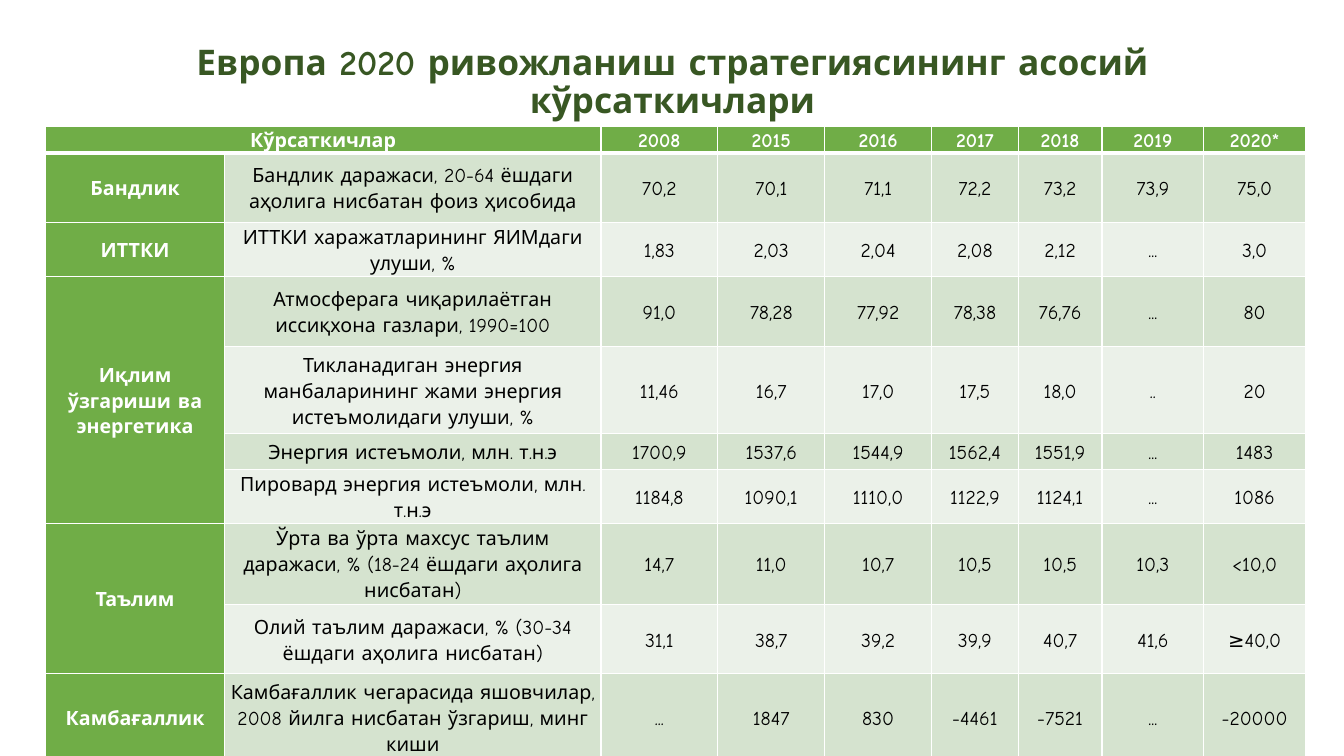
from dataclasses import dataclass

from lxml import etree
from pptx import Presentation, util as u
from pptx.dml.color import RGBColor
from pptx.enum import text
from pptx.oxml import ns

STEP = u.Inches(0.01)  # the page grid has 1333 columns and 750 rows
PAGE_COLUMNS, PAGE_ROWS = 1333, 750
TABLE_COLUMNS = [178, 373, 116, 106, 106, 86, 83, 101, 101]
HEADER_ROWS = 17

FONT = "Comic Neue"
TITLE_GREEN = RGBColor(0x38, 0x57, 0x23)
HEAD_GREEN = RGBColor(0x70, 0xAD, 0x47)
BAND_DARK = RGBColor(0xD5, 0xE3, 0xCF)
BAND_LIGHT = RGBColor(0xEB, 0xF1, 0xE9)
WHITE = RGBColor(0xFF, 0xFF, 0xFF)
BLACK = RGBColor(0x00, 0x00, 0x00)

TITLE = "Европа 2020 ривожланиш стратегиясининг асосий кўрсаткичлари"
YEARS = "2008 2015 2016 2017 2018 2019 2020*"


@dataclass(frozen=True)
class Indicator:
    name: str
    values: str
    rows: int


@dataclass(frozen=True)
class Area:
    name: str
    indicators: list[Indicator]


@dataclass(frozen=True)
class Style:
    size: float
    color: RGBColor
    bold: bool
    spacing: float


TITLE_STYLE = Style(25.2, TITLE_GREEN, True, 0.9)
HEAD_STYLE = Style(14, WHITE, True, 1.15)
BODY_STYLE = Style(14, BLACK, False, 1.15)

AREAS = [
    Area("Бандлик", [
        Indicator("Бандлик даражаси, 20-64 ёшдаги аҳолига нисбатан фоиз ҳисобида",
                  "70,2 70,1 71,1 72,2 73,2 73,9 75,0", 69),
    ]),
    Area("ИТТКИ", [
        Indicator("ИТТКИ харажатларининг ЯИМдаги улуши, %",
                  "1,83 2,03 2,04 2,08 2,12 ... 3,0", 52),
    ]),
    Area("Иқлим ўзгариши ва энергетика", [
        Indicator("Атмосферага чиқарилаётган иссиқхона газлари, 1990=100",
                  "91,0 78,28 77,92 78,38 76,76 ... 80", 69),
        Indicator("Тикланадиган энергия манбаларининг жами энергия истеъмолидаги улуши, %",
                  "11,46 16,7 17,0 17,5 18,0 .. 20", 87),
        Indicator("Энергия истеъмоли, млн. т.н.э",
                  "1700,9 1537,6 1544,9 1562,4 1551,9 ... 1483", 35),
        Indicator("Пировард энергия истеъмоли, млн. т.н.э",
                  "1184,8 1090,1 1110,0 1122,9 1124,1 ... 1086", 35),
    ]),
    Area("Таълим", [
        Indicator("Ўрта ва ўрта махсус таълим даражаси, % (18-24 ёшдаги аҳолига нисбатан)",
                  "14,7 11,0 10,7 10,5 10,5 10,3 <10,0", 69),
        Indicator("Олий таълим даражаси, % (30-34 ёшдаги аҳолига нисбатан)",
                  "31,1 38,7 39,2 39,9 40,7 41,6 ≥40,0", 69),
    ]),
    Area("Камбағаллик", [
        Indicator("Камбағаллик чегарасида яшовчилар, 2008 йилга нисбатан ўзгариш, минг киши",
                  "... 1847 830 -4461 -7521 ... -20000", 87),
    ]),
]


def write(frame, words: str, style: Style) -> None:
    frame.text = words
    para = frame.paragraphs[0]
    para.alignment = text.PP_ALIGN.CENTER
    para.line_spacing = style.spacing
    for span in para.runs:
        span.font.name = FONT
        span.font.size = u.Pt(style.size)
        span.font.bold = style.bold
        span.font.color.rgb = style.color


def add_borders(cell, top: float, bottom: float) -> None:
    """Draw white cell borders; widths are in points."""
    properties = cell._tc.get_or_add_tcPr()
    widths = {"a:lnL": 1, "a:lnR": 1, "a:lnT": top, "a:lnB": bottom}
    for position, (tag, width) in enumerate(widths.items()):
        line = etree.Element(ns.qn(tag), w=str(u.Pt(width)))
        fill = etree.SubElement(line, ns.qn("a:solidFill"))
        etree.SubElement(fill, ns.qn("a:srgbClr"), val=str(WHITE))
        properties.insert(position, line)


def fill_cell(cell, words: str, style: Style, color: RGBColor, row: int) -> None:
    cell.margin_left = cell.margin_right = u.Inches(0.05)
    cell.margin_top = cell.margin_bottom = 0
    cell.vertical_anchor = text.MSO_ANCHOR.MIDDLE
    cell.fill.solid()
    cell.fill.fore_color.rgb = color
    add_borders(cell, top=3 if row == 1 else 1, bottom=3 if row == 0 else 1)
    write(cell.text_frame, words, style)


def add_title(page) -> None:
    box = page.shapes.add_textbox(92 * STEP, 40 * STEP, 1150 * STEP, 85 * STEP)
    box.text_frame.word_wrap = True
    box.text_frame.vertical_anchor = text.MSO_ANCHOR.MIDDLE
    write(box.text_frame, TITLE, TITLE_STYLE)


def add_indicator_table(page) -> None:
    heights = [HEADER_ROWS] + [item.rows for area in AREAS for item in area.indicators]
    table = page.shapes.add_table(
        len(heights), len(TABLE_COLUMNS), 45 * STEP, 125 * STEP,
        sum(TABLE_COLUMNS) * STEP, sum(heights) * STEP).table
    for column, width in zip(table.columns, TABLE_COLUMNS):
        column.width = width * STEP
    for line, height in zip(table.rows, heights):
        line.height = height * STEP

    for column, words in enumerate(["Кўрсаткичлар", "", *YEARS.split()]):
        fill_cell(table.cell(0, column), words, HEAD_STYLE, HEAD_GREEN, 0)
    table.cell(0, 0).merge(table.cell(0, 1))

    row = 1
    for area in AREAS:
        first = row
        for item in area.indicators:
            name = area.name if row == first else ""
            fill_cell(table.cell(row, 0), name, HEAD_STYLE, HEAD_GREEN, row)
            band = BAND_DARK if row % 2 else BAND_LIGHT
            for column, words in enumerate([item.name, *item.values.split()], start=1):
                fill_cell(table.cell(row, column), words, BODY_STYLE, band, row)
            row += 1
        if row - first > 1:
            table.cell(first, 0).merge(table.cell(row - 1, 0))


def main() -> None:
    deck = Presentation()
    deck.slide_width, deck.slide_height = PAGE_COLUMNS * STEP, PAGE_ROWS * STEP
    page = deck.slides.add_slide(deck.slide_layouts[6])
    add_title(page)
    add_indicator_table(page)
    deck.save("out.pptx")


if __name__ == "__main__":
    main()
